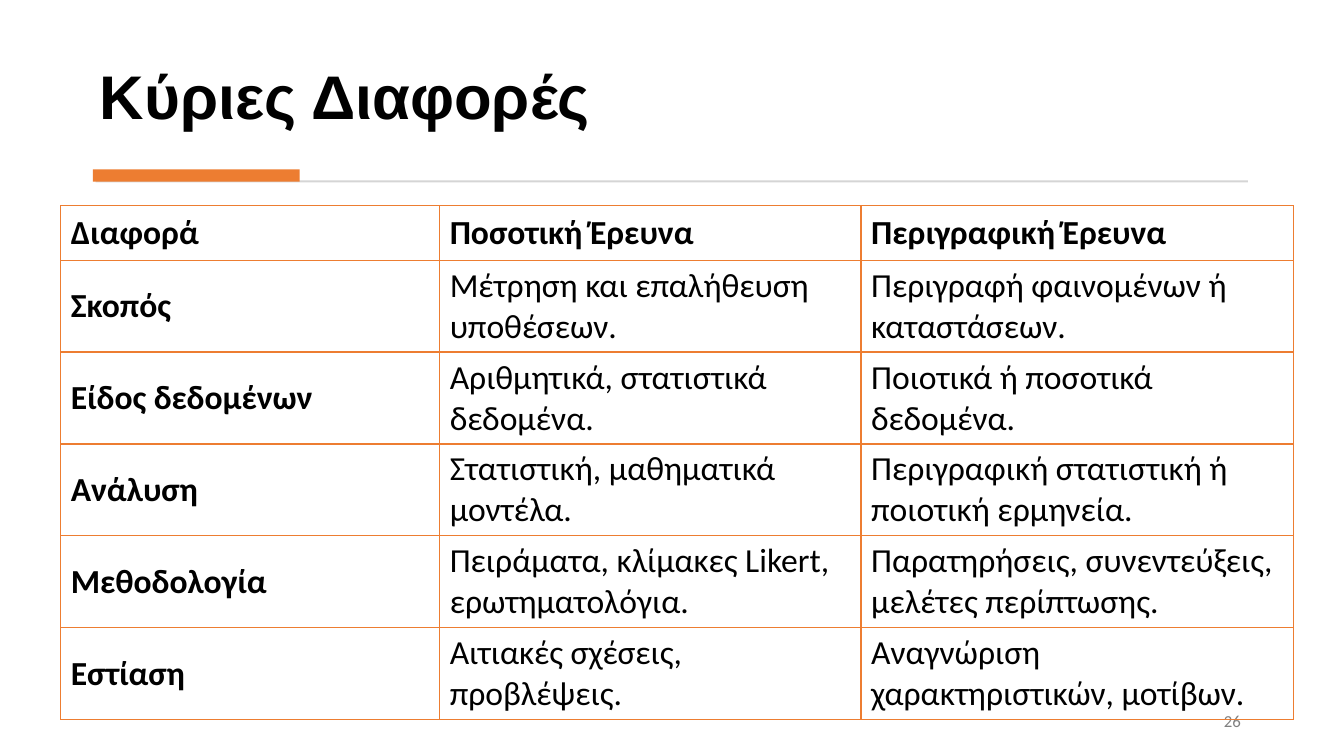
from lxml import etree
from pptx import Presentation
from pptx.dml.color import RGBColor
from pptx.enum import shapes, text
from pptx.oxml import ns
from pptx.util import Pt

ORANGE, GREY, BLACK = "ED7D31", "D5D5D5", "000000"
COLUMN_WIDTHS = (270.7, 301, 308.9)
HEADER_HEIGHT, ROW_HEIGHT = 39, 65.65
DIFFERENCES = [
    ("Διαφορά", "Ποσοτική Έρευνα", "Περιγραφική Έρευνα"),
    ("Σκοπός", "Μέτρηση και επαλήθευση υποθέσεων.",
     "Περιγραφή φαινομένων ή καταστάσεων."),
    ("Είδος δεδομένων", "Αριθμητικά, στατιστικά δεδομένα.",
     "Ποιοτικά ή ποσοτικά δεδομένα."),
    ("Ανάλυση", "Στατιστική, μαθηματικά μοντέλα.",
     "Περιγραφική στατιστική ή ποιοτική ερμηνεία."),
    ("Μεθοδολογία", "Πειράματα, κλίμακες Likert, ερωτηματολόγια.",
     "Παρατηρήσεις, συνεντεύξεις, μελέτες περίπτωσης."),
    ("Εστίαση", "Αιτιακές σχέσεις, προβλέψεις.",
     "Αναγνώριση χαρακτηριστικών, μοτίβων."),
]


def colour(hex_value):
    return RGBColor.from_string(hex_value)


def apply(target, formats):
    for attribute, value in formats.items():
        setattr(target, attribute, value)


class Deck:
    """Holds the text style and the slide being built."""

    def __init__(self, width, height):
        self.presentation = Presentation()
        apply(self.presentation, {"slide_width": Pt(width), "slide_height": Pt(height)})
        self.slide = self.presentation.slides.add_slide(self.presentation.slide_layouts[5])

    def add_wording(self, frame, wording, size, ink=BLACK, font="Calibri", bold=False,
                    align=text.PP_ALIGN.LEFT, spacing=1.0):
        paragraph = frame.paragraphs[0]
        apply(paragraph, {"alignment": align, "line_spacing": spacing})
        run = paragraph.add_run()
        run.text = wording
        apply(run.font, {"size": Pt(size), "name": font, "bold": bold})
        run.font.color.rgb = colour(ink)

    def title(self, wording, left, top, width, height, bottom_inset):
        heading = self.slide.shapes.title
        apply(heading, {"left": Pt(left), "top": Pt(top),
                        "width": Pt(width), "height": Pt(height)})
        apply(heading.text_frame, {
            "word_wrap": True, "auto_size": text.MSO_AUTO_SIZE.NONE,
            "vertical_anchor": text.MSO_ANCHOR.BOTTOM,
            "margin_top": 0, "margin_bottom": Pt(bottom_inset)})
        self.add_wording(heading.text_frame, wording, 44, font="Arial", bold=True,
                         spacing=0.9)

    def bar(self, left, top, width, height, fill):
        rule = self.slide.shapes.add_shape(
            shapes.MSO_SHAPE.RECTANGLE, Pt(left), Pt(top), Pt(width), Pt(height))
        rule.shadow.inherit = False
        rule.fill.solid()
        rule.fill.fore_color.rgb = colour(fill)
        rule.line.fill.background()

    def page_number(self, number, left, top, width, height):
        frame = self.slide.shapes.add_textbox(
            Pt(left), Pt(top), Pt(width), Pt(height)).text_frame
        apply(frame, {"word_wrap": True, "vertical_anchor": text.MSO_ANCHOR.MIDDLE})
        self.add_wording(frame, number, 12, "808080", align=text.PP_ALIGN.RIGHT)

    def table(self, rows, left, top, widths, heights):
        grid = self.slide.shapes.add_table(
            len(rows), len(widths), Pt(left), Pt(top),
            Pt(sum(widths)), Pt(sum(heights))).table
        apply(grid, {"first_row": False, "horz_banding": False})
        for column, width in zip(grid.columns, widths):
            column.width = Pt(width)
        for row, height in zip(grid.rows, heights):
            row.height = Pt(height)
        for r, row in enumerate(rows):
            for c, wording in enumerate(row):
                cell = grid.cell(r, c)
                cell.vertical_anchor = text.MSO_ANCHOR.MIDDLE
                self.add_wording(cell.text_frame, wording, 24, bold=r == 0 or c == 0)
                self.border(cell)
                cell.fill.background()

    def border(self, cell):
        properties = cell._tc.get_or_add_tcPr()
        for side in ("lnL", "lnR", "lnT", "lnB"):
            edge = etree.SubElement(properties, ns.qn(f"a:{side}"), w=str(Pt(1)))
            fill = etree.SubElement(edge, ns.qn("a:solidFill"))
            etree.SubElement(fill, ns.qn("a:srgbClr"), val=ORANGE)


def main():
    deck = Deck(960, 540)
    deck.title("Κύριες Διαφορές", 64, 64, 827, 80, bottom_inset=49)
    deck.bar(68.4, 128.9, 823, 1.4, GREY)
    deck.bar(66.4, 121, 147.6, 8.8, ORANGE)
    deck.page_number("26", 698.4, 500.4, 195, 28.8)
    body_heights = [ROW_HEIGHT] * (len(DIFFERENCES) - 1)
    deck.table(DIFFERENCES, 43.4, 146.9, COLUMN_WIDTHS, [HEADER_HEIGHT, *body_heights])
    deck.presentation.save("out.pptx")


if __name__ == "__main__":
    main()
